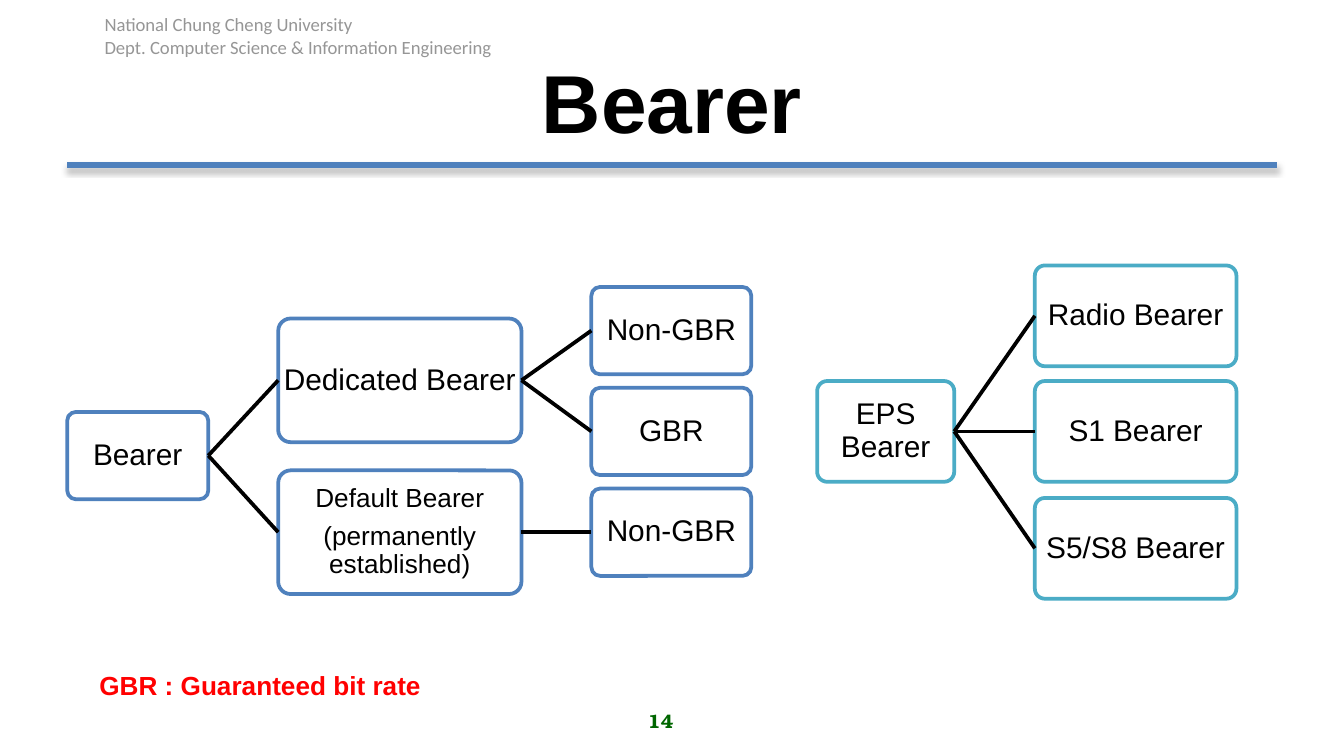
"""Build the Bearer slide: two bearer trees under a ruled title."""
from lxml import etree
from pptx import Presentation
from pptx.dml.color import RGBColor as RGB
from pptx.enum.shapes import MSO_CONNECTOR as CONN, MSO_SHAPE as SHAPE
from pptx.enum.text import MSO_ANCHOR as ANCHOR, PP_ALIGN as ALIGN
from pptx.oxml import parse_xml
from pptx.oxml.ns import qn
from pptx.util import Inches, Pt

COLORS = {"blue": "4F81BD", "teal": "4BACC6", "black": "000000", "white": "FFFFFF",
          "gray": "969696", "green": "006600", "red": "FF0000"}
RULE_SHADOW = (
    '<a:effectLst xmlns:a="http://schemas.openxmlformats.org/drawingml/2006/main">'
    '<a:outerShdw blurRad="39370" dist="22860" dir="5400000" rotWithShape="0">'
    '<a:srgbClr val="000000"><a:alpha val="35000"/></a:srgbClr>'
    '</a:outerShdw></a:effectLst>')


def write(sp, text, size, font="Arial", color="black", bold=False,
          align=ALIGN.CENTER, anchor=ANCHOR.MIDDLE):
    tf = sp.text_frame
    tf.word_wrap = True
    tf.vertical_anchor = anchor
    tf.text = text
    for p in tf.paragraphs:
        p.alignment = align
        for r in p.runs:
            r.font.name = font
            r.font.size = Pt(size)
            r.font.bold = bold
            r.font.color.rgb = RGB.from_string(COLORS[color])
    return tf


def add_line(x1, y1, x2, y2, color, width):
    line = s.shapes.add_connector(CONN.STRAIGHT, Inches(x1), Inches(y1), Inches(x2), Inches(y2))
    line.line.color.rgb = RGB.from_string(COLORS[color])
    line.line.width = Pt(width)
    return line


prs = Presentation()
prs.slide_width = Inches(10)
prs.slide_height = Inches(10 * 9 / 16)
s = prs.slides.add_slide(prs.slide_layouts[6])

rule = add_line(0.5, 1.23, 9.5, 1.23, "blue", 3)
rule._element.spPr.append(parse_xml(RULE_SHADOW))

texts = [
    ((0.68, 0.05, 3.4, 0.33),
     "National Chung Cheng University\nDept. Computer Science & Information Engineering",
     10, "Calibri", "gray", False, ALIGN.LEFT, ANCHOR.TOP),
    ((0.5, 0.28, 9, 0.94), "Bearer", 44, "Arial", "black", True, ALIGN.CENTER, ANCHOR.MIDDLE),
    ((3.75, 5.21, 2.33, 0.3), "14", 10.5, "TeX Gyre Bonum", "green", True,
     ALIGN.CENTER, ANCHOR.MIDDLE),
    ((0.64, 4.93, 6.22, 0.34), "GBR : Guaranteed bit rate", 14, "Arial", "red", True,
     ALIGN.LEFT, ANCHOR.TOP),
]
for box, *style in texts:
    write(s.shapes.add_textbox(*map(Inches, box)), *style)

columns = {
    "bearer": (0.5, 1.05, 0.65, "blue"),
    "type": (2.07, 1.81, 0.92, "blue"),
    "rate": (4.4, 1.19, 0.65, "blue"),
    "eps": (6.08, 1.02, 0.75, "teal"),
    "segment": (7.7, 1.5, 0.75, "teal"),
}
nodes = [
    ("root", None, "bearer", 3.39, "Bearer", 16),
    ("dedicated", "root", "type", 2.83, "Dedicated Bearer", 16),
    ("default", "root", "type", 3.96, "Default Bearer\n(permanently established)", 14),
    ("dedicated non-GBR", "dedicated", "rate", 2.46, "Non-GBR", 16),
    ("dedicated GBR", "dedicated", "rate", 3.21, "GBR", 16),
    ("default non-GBR", "default", "rate", 3.96, "Non-GBR", 16),
    ("EPS", None, "eps", 3.21, "EPS Bearer", 16),
    ("radio", "EPS", "segment", 2.35, "Radio Bearer", 16),
    ("S1", "EPS", "segment", 3.21, "S1 Bearer", 16),
    ("S5/S8", "EPS", "segment", 4.08, "S5/S8 Bearer", 16),
]
placed = {}
for name, parent, column, middle, text, size in nodes:
    left, width, height, color = columns[column]
    sp = s.shapes.add_shape(SHAPE.ROUNDED_RECTANGLE, Inches(left), Inches(middle - height / 2),
                            Inches(width), Inches(height))
    sp.adjustments[0] = 0.1
    sp.shadow.inherit = False
    sp.fill.solid()
    sp.fill.fore_color.rgb = RGB.from_string(COLORS["white"])
    sp.line.color.rgb = RGB.from_string(COLORS[color])
    sp.line.width = Pt(2)
    tf = write(sp, text, size)
    tf.margin_left = tf.margin_right = tf.margin_top = tf.margin_bottom = 0
    for p in tf.paragraphs:
        p.line_spacing = 0.9
        p.space_after = Pt(5)
    placed[name] = sp
    if parent:
        link = add_line(0, 0, 1, 1, "black", 2)
        link.begin_connect(placed[parent], 3)
        link.end_connect(sp, 1)
        etree.SubElement(link._element.spPr, qn("a:effectLst"))

prs.save("out.pptx")
